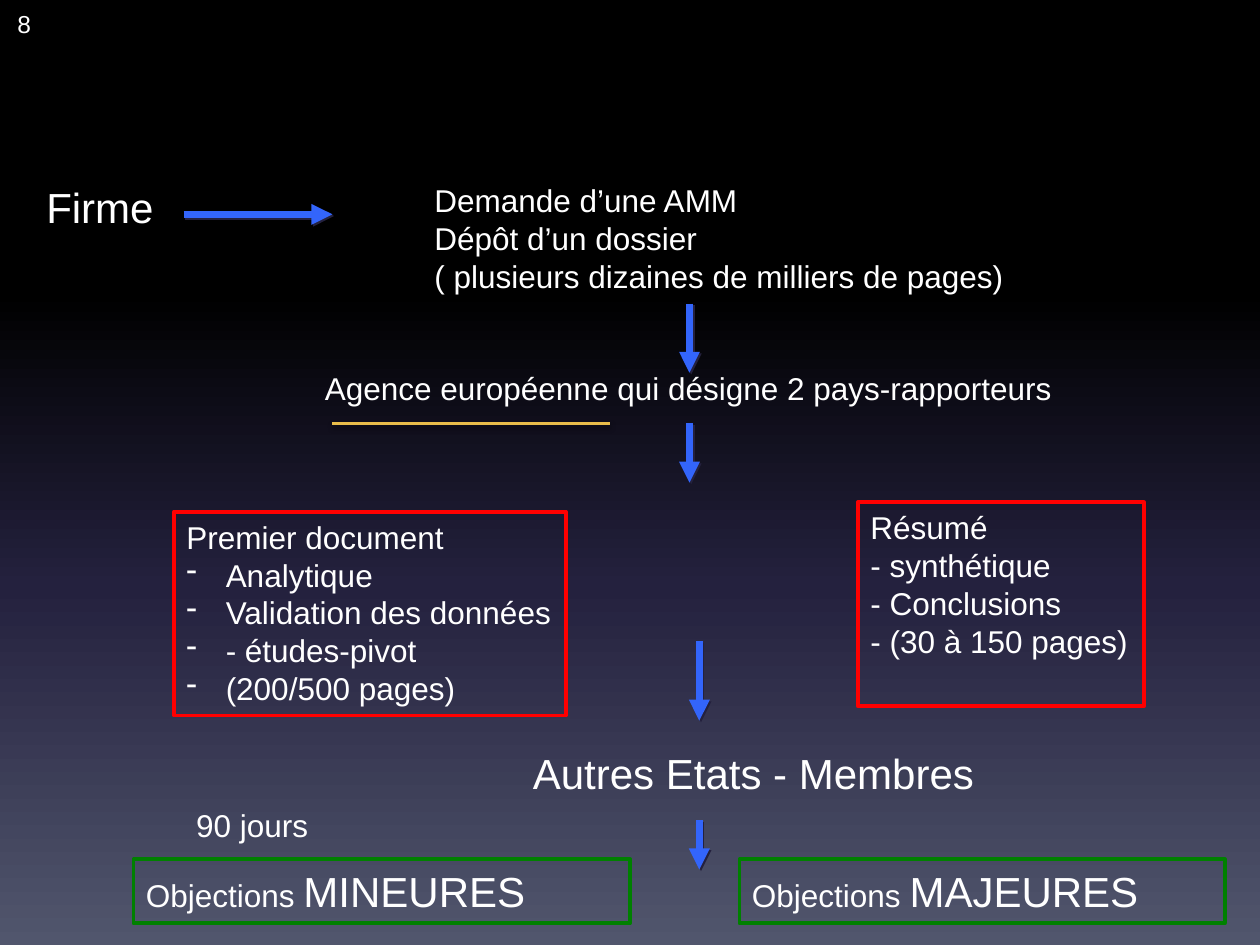
from pptx import Presentation
from pptx import util as u
from pptx.dml.color import RGBColor
from pptx.enum import shapes, text
from pptx.oxml import parse_xml, ns

WHITE = RGBColor(0xFF, 0xFF, 0xFF)
BLACK = RGBColor(0x00, 0x00, 0x00)
BLUE = RGBColor(0x33, 0x65, 0xFB)
GOLD = RGBColor(0xE8, 0xBC, 0x4A)
RED = RGBColor(0xFF, 0x00, 0x00)
GREEN = RGBColor(0x00, 0x80, 0x00)
NIGHT = RGBColor(0x24, 0x21, 0x3E)
SLATE = RGBColor(0x51, 0x56, 0x6D)
FONT = "Arial"
HANG = 22.5


def set_background(s):
    """Fill the slide with the vertical night gradient."""
    fill = s.background.fill
    fill.gradient()
    fill.gradient_angle = 270
    stops = next(s._element.iter(ns.qn("a:gsLst")))
    for stop in list(stops):
        stops.remove(stop)
    for pos, color in ((0, BLACK), (31, BLACK), (62, NIGHT), (100, SLATE)):
        stops.append(parse_xml(
            f'<a:gs {ns.nsdecls("a")} pos="{pos * 1000}"><a:srgbClr val="{color}"/></a:gs>'))


def format_run(r, size):
    """Give a run the slide's font."""
    r.font.name = FONT
    r.font.size = u.Pt(size)
    r.font.color.rgb = WHITE


def fill_text(tf, lines, size, wrap=False):
    """Write one paragraph per line, anchored top left."""
    tf.word_wrap = wrap
    tf.auto_size = text.MSO_AUTO_SIZE.NONE
    tf.vertical_anchor = text.MSO_ANCHOR.TOP
    tf.text = "\n".join(lines)
    for p in tf.paragraphs:
        p.alignment = text.PP_ALIGN.LEFT
        for r in p.runs:
            format_run(r, size)


def add_label(s, box, lines, size=18):
    """Add a plain text box."""
    sp = s.shapes.add_textbox(*map(u.Pt, box))
    fill_text(sp.text_frame, lines, size)


def add_frame(s, box, color, lines, wrap=False):
    """Add an outlined rectangle with text and return its text frame."""
    sp = s.shapes.add_shape(shapes.MSO_SHAPE.RECTANGLE, *map(u.Pt, box))
    sp.shadow.inherit = False
    sp.fill.background()
    sp.line.color.rgb = color
    sp.line.width = u.Pt(2.25)
    fill_text(sp.text_frame, lines, 18, wrap)
    return sp.text_frame


def add_dash(p):
    """Give a paragraph a hanging dash bullet."""
    pPr = p._p.get_or_add_pPr()
    pPr.set("marL", str(u.Pt(HANG)))
    pPr.set("indent", str(-u.Pt(HANG)))
    pPr.append(parse_xml(f'<a:buChar {ns.nsdecls("a")} char="-"/>'))


def add_objection(s, left, width, kind):
    """Add a green box naming one kind of objection."""
    tf = add_frame(s, (left, 491, width, 36.7), GREEN, ["Objections "], wrap=True)
    r = tf.paragraphs[0].add_run()
    r.text = kind
    format_run(r, 24)


def add_line(s, ends, color, width, shadow):
    """Add a straight line with a shadow of colour, alpha, blur, distance and angle."""
    cx = s.shapes.add_connector(shapes.MSO_CONNECTOR.STRAIGHT, *map(u.Pt, ends))
    cx.line.color.rgb = color
    cx.line.width = u.Pt(width)
    tint, alpha, blur, dist, angle = shadow
    cx._element.spPr.append(parse_xml(
        f'<a:effectLst {ns.nsdecls("a")}><a:outerShdw blurRad="{u.Pt(blur)}" '
        f'dist="{u.Pt(dist)}" dir="{angle * 60000}" algn="ctr" rotWithShape="0">'
        f'<a:srgbClr val="{tint}"><a:alpha val="{alpha * 1000}"/></a:srgbClr>'
        f'</a:outerShdw></a:effectLst>'))
    return cx


def add_arrow(s, *ends):
    """Add a blue arrow."""
    cx = add_line(s, ends, BLUE, 4, (NIGHT, 100, 0, 1.4, 45))
    cx.line._get_or_add_ln().append(
        parse_xml(f'<a:tailEnd {ns.nsdecls("a")} type="triangle"/>'))


def main():
    """Build the slide on the European authorisation procedure."""
    prs = Presentation()
    prs.slide_width, prs.slide_height = u.Pt(720), u.Pt(540)
    s = prs.slides.add_slide(prs.slide_layouts[6])
    set_background(s)

    add_label(s, (2.9, 1.4, 22.3, 24.5), ["8"], 14)
    add_label(s, (19.4, 100, 76.3, 36.7), ["Firme"], 24)
    add_arrow(s, 105, 122.5, 190, 122.5)
    add_label(s, (241.2, 100, 342.7, 72.7), [
        "Demande d’une AMM", "Dépôt d’un dossier",
        "( plusieurs dizaines de milliers de pages)"])
    add_arrow(s, 394, 173.5, 394, 213)
    add_label(s, (178.6, 207.4, 434.9, 28.8),
              ["Agence européenne qui désigne 2 pays-rapporteurs"])
    add_arrow(s, 394, 242, 394, 275.8)

    tf = add_frame(s, (99.4, 292.3, 223.9, 116.6), RED, [
        "Premier document", "Analytique", "Validation des données",
        "- études-pivot", "(200/500 pages)"])
    for p in tf.paragraphs[1:]:
        add_dash(p)
    add_frame(s, (490.3, 287, 163.4, 116.6), RED, [
        "Résumé", "- synthétique", "- Conclusions", "- (30 à 150 pages)"])
    add_arrow(s, 399.6, 366.5, 399.6, 411.8)

    add_label(s, (297.4, 423.4, 270, 36.7), ["Autres Etats - Membres"], 24)
    add_label(s, (105, 457.2, 79.2, 28.8), ["90 jours"])
    add_objection(s, 76.3, 283.7, "MINEURES")
    add_objection(s, 422.6, 277.2, "MAJEURES")
    add_arrow(s, 399.6, 468.7, 399.6, 496.8)
    add_line(s, (190, 242, 348.5, 242), GOLD, 2, (BLACK, 38, 3.1, 1.6, 90))
    prs.save("out.pptx")


if __name__ == "__main__":
    main()
